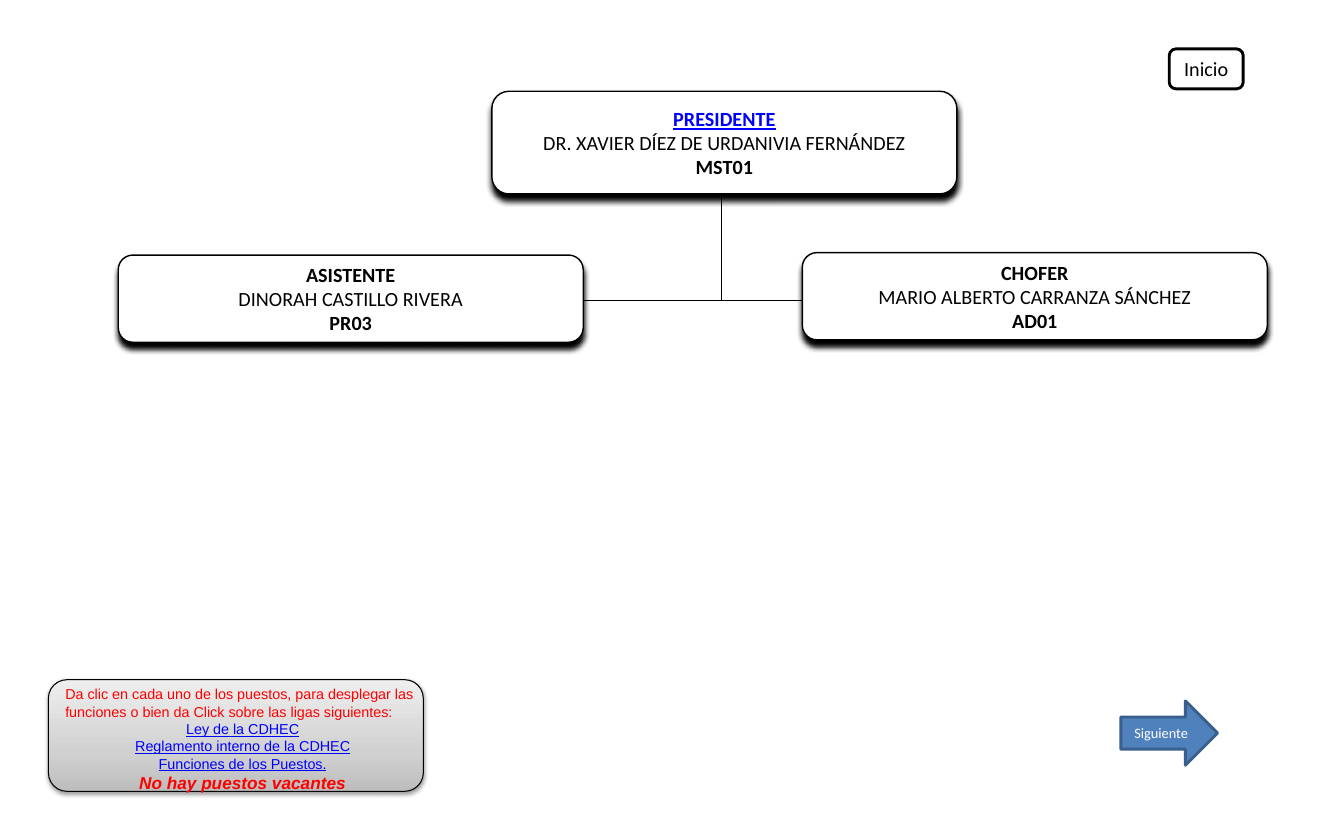
"""Builds the organisation chart slide of the president's office."""
from copy import deepcopy
from dataclasses import dataclass

from lxml.etree import SubElement
from pptx import Presentation
from pptx.dml.color import RGBColor
from pptx.enum.shapes import MSO_CONNECTOR as Connector, MSO_SHAPE as Shape
from pptx.enum.text import MSO_ANCHOR as Anchor, MSO_AUTO_SIZE as AutoSize, PP_ALIGN as Align
from pptx.oxml.ns import qn
from pptx.util import Inches, Pt

WIDTH, HEIGHT = Inches(12.99), Inches(7.88)
COLUMN, ROW = WIDTH / 100, HEIGHT / 100

BLACK = RGBColor(0x00, 0x00, 0x00)
WHITE = RGBColor(0xFF, 0xFF, 0xFF)
RED = RGBColor(0xFF, 0x00, 0x00)
LINK_BLUE = RGBColor(0x00, 0x00, 0xFF)
ARROW_BLUE = RGBColor(0x4F, 0x81, 0xBD)
ARROW_EDGE = RGBColor(0x3A, 0x5F, 0x8C)
GRAY_STOPS = [(0, RGBColor(0xBD, 0xBD, 0xBD)), (0.35, RGBColor(0xD1, 0xD1, 0xD1)),
              (1, RGBColor(0xEE, 0xEE, 0xEE))]


@dataclass
class Style:
    """Look of one line of text."""
    size: int
    font: str = "Calibri"
    color: RGBColor = BLACK
    bold: bool = False
    italic: bool = False
    underline: bool = False
    align: Align = Align.CENTER


NAME = Style(14)
POST = Style(14, bold=True)
POST_LINK = Style(14, color=LINK_BLUE, bold=True, underline=True)
BUTTON = Style(10, color=WHITE)
HINT = Style(10, "Arial", RED, align=Align.LEFT)
LINK = Style(10, "Arial", LINK_BLUE, underline=True)
VACANCY = Style(12, "Arial", RED, bold=True, italic=True)

POSTS = [
    ((36.6, 11.2, 34.6, 12.6), POST_LINK,
     ("PRESIDENTE", "DR. XAVIER DÍEZ DE URDANIVIA FERNÁNDEZ", "MST01")),
    ((8.8, 31.3, 34.6, 10.7), POST, ("ASISTENTE", "DINORAH CASTILLO RIVERA", "PR03")),
    ((59.7, 31, 34.6, 10.7), POST, ("CHOFER", "MARIO ALBERTO CARRANZA SÁNCHEZ", "AD01")),
]
BRANCHES = [(53.7, 23.8, 53.7, 36.9), (36, 36.9, 53.7, 36.9), (50, 36.9, 59.7, 36.9)]
NOTICE = [
    ("Da clic en cada uno de los puestos, para desplegar las funciones "
     "o bien da Click sobre las ligas siguientes:", HINT),
    ("Ley de la CDHEC", LINK),
    ("Reglamento interno de la CDHEC", LINK),
    ("Funciones de los Puestos.", LINK),
    ("No hay puestos vacantes", VACANCY),
]


def to_grid(box):
    """Turn columns and rows into lengths on the slide."""
    return [round(share * unit) for share, unit in zip(box, (COLUMN, ROW, COLUMN, ROW))]


def write_lines(text_frame, lines):
    """Write one paragraph for each pair of text and style."""
    text_frame.text = "\n".join(text for text, _ in lines)
    for paragraph, (_, style) in zip(text_frame.paragraphs, lines):
        paragraph.alignment = style.align
        font = paragraph.runs[0].font
        font.name, font.size = style.font, Pt(style.size)
        font.bold, font.italic, font.underline = style.bold, style.italic, style.underline
        font.color.rgb = style.color


def add_shape(slide, kind, box, fill, edge, edge_width, lines=()):
    """Add a preset shape with its fill, outline and centred text."""
    shape = slide.shapes.add_shape(kind, *to_grid(box))
    shape.shadow.inherit = False
    if fill:
        shape.fill.solid()
        shape.fill.fore_color.rgb = fill
    shape.line.color.rgb = edge
    shape.line.width = Pt(edge_width)
    shape.text_frame.vertical_anchor = Anchor.MIDDLE
    if lines:
        write_lines(shape.text_frame, lines)
    return shape


def add_shadow(shape, blur, distance, opacity):
    """Drop a black shadow straight below a shape."""
    effects = shape._element.spPr.find(qn("a:effectLst"))
    shadow = SubElement(effects, qn("a:outerShdw"), blurRad=str(Pt(blur)),
                        dist=str(Pt(distance)), dir="5400000", rotWithShape="0")
    color = SubElement(shadow, qn("a:srgbClr"), val=str(BLACK))
    SubElement(color, qn("a:alpha"), val=str(opacity * 1000))


def add_post(slide, box, title_style, texts):
    """Add the box of one post: title, holder and code."""
    lines = list(zip(texts, (title_style, NAME, POST)))
    shape = add_shape(slide, Shape.ROUNDED_RECTANGLE, box, WHITE, BLACK, 1, lines)
    add_shadow(shape, 4, 4, 100)
    frame = shape.text_frame
    frame.word_wrap = False
    frame.margin_left = frame.margin_right = Inches(0.17)
    frame.margin_top = frame.margin_bottom = Inches(0.09)


def add_branch(slide, ends):
    """Add a thin straight line of the chart."""
    connector = slide.shapes.add_connector(Connector.STRAIGHT, *to_grid(ends))
    connector.line.color.rgb = BLACK
    connector.line.width = Pt(0.75)
    SubElement(connector._element.spPr, qn("a:effectLst"))


def fill_gray_gradient(shape):
    """Fill a shape with grays that lighten upwards."""
    shape.fill.gradient()
    shape.fill.gradient_angle = 90
    stop_list = shape._element.spPr.find(qn("a:gradFill")).find(qn("a:gsLst"))
    stop_list.append(deepcopy(stop_list[0]))
    for stop, (position, color) in zip(shape.fill.gradient_stops, GRAY_STOPS):
        stop.position = position
        stop.color.rgb = color


def add_notice(slide):
    """Add the gray panel and its instructions."""
    panel = add_shape(slide, Shape.ROUNDED_RECTANGLE, (3.6, 83.4, 27.9, 13.7),
                      None, BLACK, 0.75)
    fill_gray_gradient(panel)
    add_shadow(panel, 3.1, 1.6, 38)
    frame = slide.shapes.add_textbox(*to_grid((4.1, 83.5, 27.9, 14.5))).text_frame
    frame.word_wrap = True
    frame.auto_size = AutoSize.SHAPE_TO_FIT_TEXT
    write_lines(frame, NOTICE)


def main():
    """Build the slide and save it."""
    presentation = Presentation()
    presentation.slide_width, presentation.slide_height = WIDTH, HEIGHT
    slide = presentation.slides.add_slide(presentation.slide_layouts[6])
    for ends in BRANCHES:
        add_branch(slide, ends)
    for box, title_style, texts in POSTS:
        add_post(slide, box, title_style, texts)
    add_shape(slide, Shape.ROUNDED_RECTANGLE, (87, 6, 5.5, 4.9), WHITE, BLACK, 2,
              [("Inicio", NAME)])
    add_notice(slide)
    add_shape(slide, Shape.RIGHT_ARROW, (83.4, 86, 7.2, 7.9), ARROW_BLUE, ARROW_EDGE, 2,
              [("Siguiente", BUTTON)])
    presentation.save("out.pptx")


if __name__ == "__main__":
    main()
